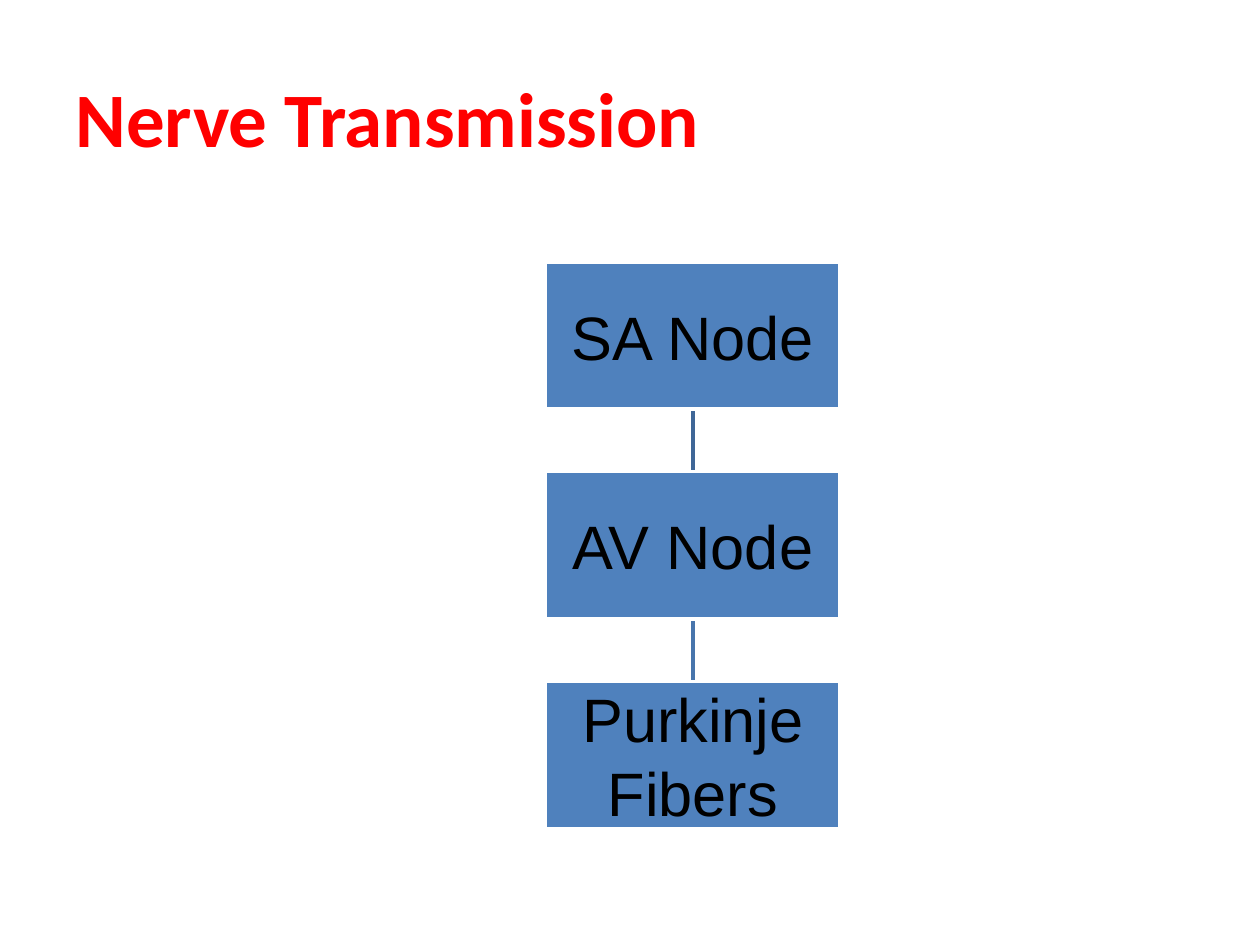
from lxml import etree
from pptx import Presentation
from pptx.dml.color import RGBColor
from pptx.enum.shapes import MSO_CONNECTOR, MSO_SHAPE
from pptx.enum.text import MSO_ANCHOR, PP_ALIGN
from pptx.oxml.ns import qn
from pptx.util import Cm, Pt

RECTANGLE = MSO_SHAPE.RECTANGLE
STRAIGHT = MSO_CONNECTOR.STRAIGHT
MIDDLE = MSO_ANCHOR.MIDDLE
LEFT, CENTER = PP_ALIGN.LEFT, PP_ALIGN.CENTER
TITLE_ONLY = 5
TOP_SIDE, BOTTOM_SIDE = 0, 2

STAGES = ["SA Node", "AV Node", "Purkinje Fibers"]
LINK_COLORS = ["3F6797", "4875AC"]
BOX_LEFT, BOX_TOP = 11, 5.28
BOX_WIDTH, BOX_HEIGHT = 5.94, 2.97
PITCH = 4.23


def color(value):
    return RGBColor.from_string(value)


class PageBuilder:
    title_font = "Calibri"
    box_font = "Arial"
    box_fill = "4F81BD"
    box_line = "FFFFFF"
    line_width = Pt(2)

    def __init__(self, page):
        self.page = page

    def format_text(self, frame, font_name, size, text_color, alignment, bold=False):
        frame.word_wrap = True
        frame.vertical_anchor = MIDDLE
        for para in frame.paragraphs:
            para.alignment = alignment
            for span in para.runs:
                span.font.name = font_name
                span.font.size = Pt(size)
                span.font.bold = bold
                span.font.color.rgb = color(text_color)

    def title(self, text, left, top, width, height):
        title = self.page.shapes.title
        title.left, title.top = Cm(left), Cm(top)
        title.width, title.height = Cm(width), Cm(height)
        title.text_frame.text = text
        self.format_text(title.text_frame, self.title_font, 44, "FF0000", LEFT, True)

    def box(self, text, left, top, width, height):
        box = self.page.shapes.add_shape(
            RECTANGLE, Cm(left), Cm(top), Cm(width), Cm(height))
        box.shadow.inherit = False
        box.fill.solid()
        box.fill.fore_color.rgb = color(self.box_fill)
        box.line.color.rgb = color(self.box_line)
        box.line.width = self.line_width
        frame = box.text_frame
        frame.margin_left = frame.margin_right = Cm(0.05)
        frame.margin_top = frame.margin_bottom = Cm(0.05)
        frame.text = text
        self.format_text(frame, self.box_font, 35, "000000", CENTER)
        return box

    def link(self, line_color):
        link = self.page.shapes.add_connector(STRAIGHT, 0, 0, 0, 0)
        link.line.color.rgb = color(line_color)
        link.line.width = self.line_width
        etree.SubElement(link._element.spPr, qn("a:effectLst"))
        return link

    def join(self, link, upper, lower):
        link.begin_connect(upper, BOTTOM_SIDE)
        link.end_connect(lower, TOP_SIDE)


def main():
    deck = Presentation()
    deck.slide_width, deck.slide_height = Cm(25.4), Cm(19.05)
    page = deck.slides.add_slide(deck.slide_layouts[TITLE_ONLY])
    builder = PageBuilder(page)
    builder.title("Nerve Transmission", 1.27, 0.76, 22.86, 3.18)
    links = [builder.link(line_color) for line_color in LINK_COLORS]
    boxes = [
        builder.box(stage, BOX_LEFT, BOX_TOP + row * PITCH, BOX_WIDTH, BOX_HEIGHT)
        for row, stage in enumerate(STAGES)
    ]
    for link, upper, lower in zip(links, boxes, boxes[1:]):
        builder.join(link, upper, lower)
    deck.save("out.pptx")


if __name__ == "__main__":
    main()
